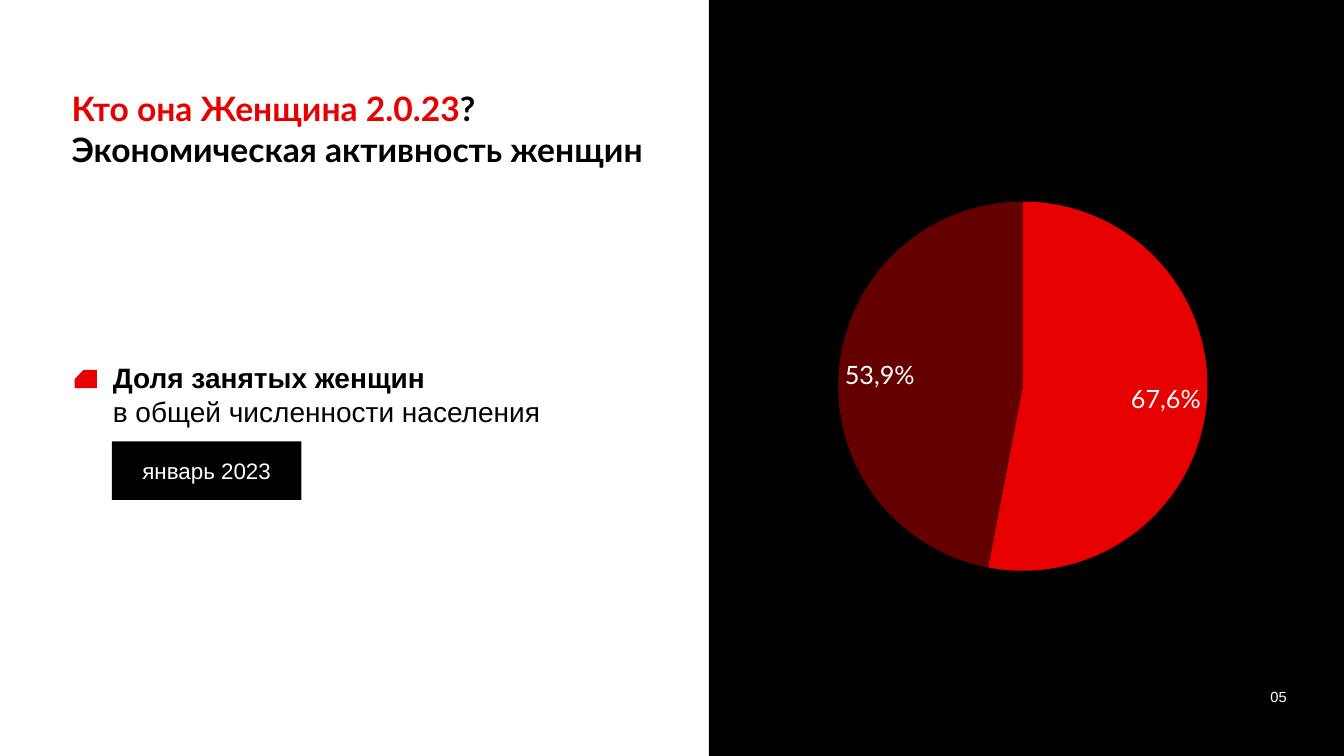
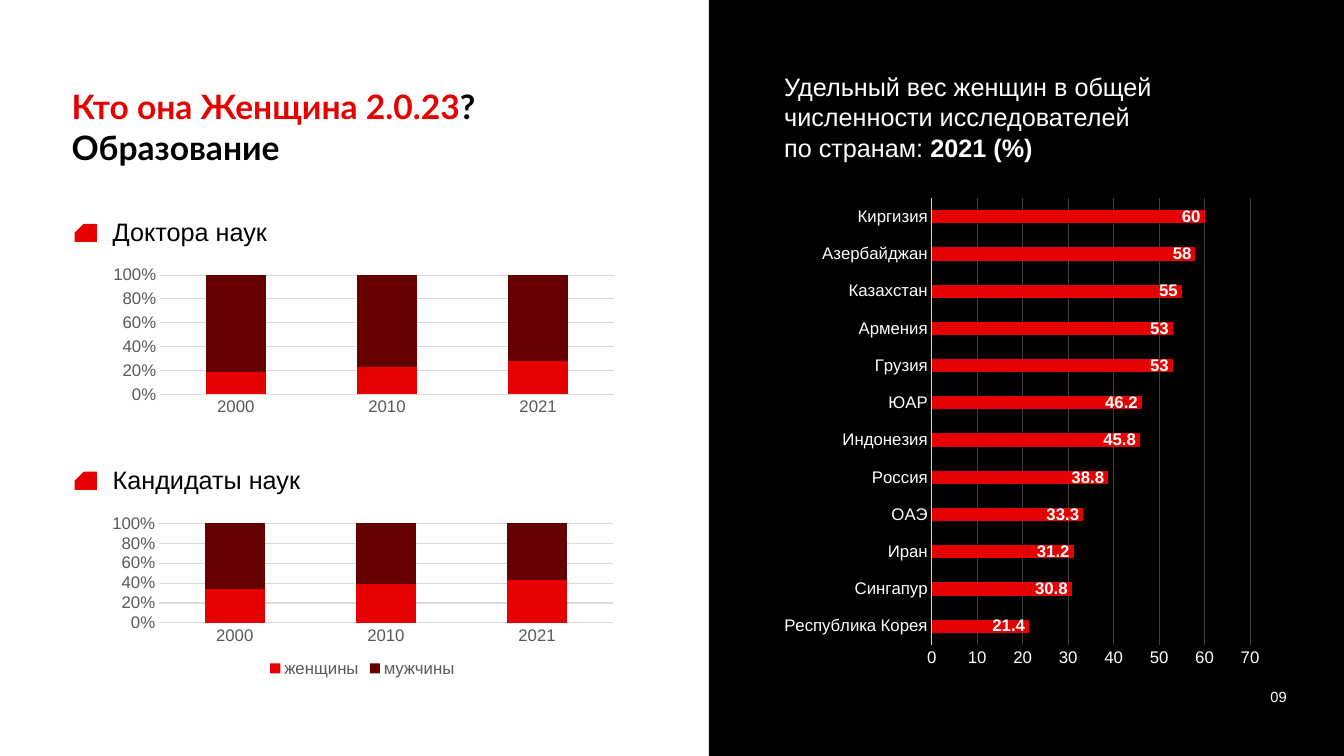
from pptx import Presentation
from pptx.chart.data import CategoryChartData
from pptx.dml.color import RGBColor
from pptx.enum import chart as charts, shapes, text
from pptx.oxml import parse_xml
from pptx.oxml.ns import nsdecls
from pptx.util import Inches, Pt

RED, DARK_RED = "E60000", "650000"
BLACK, WHITE = "000000", "FFFFFF"
GREY, LIGHT_GREY, GRID_GREY = "595959", "D9D9D9", "404040"
BODY_FONT, HEAD_FONT = "Arial", "Lato"
TEXT_LEFT = 1.02
YEARS = ["2000", "2010", "2021"]
COUNTRIES = [
    ("Республика Корея", 21.4), ("Сингапур", 30.8), ("Иран", 31.2),
    ("ОАЭ", 33.3), ("Россия", 38.8), ("Индонезия", 45.8),
    ("ЮАР", 46.2), ("Грузия", 53), ("Армения", 53),
    ("Казахстан", 55), ("Азербайджан", 58), ("Киргизия", 60),
]


# Formatting
def color(value):
    return RGBColor.from_string(value)


def style_font(font, size, tint, bold=False, name=BODY_FONT):
    font.size, font.bold, font.name = Pt(size), bold, name
    font.color.rgb = color(tint)


def paint(fill, tint):
    fill.solid()
    fill.fore_color.rgb = color(tint)


def draw_line(line, tint):
    line.width = Pt(0.75)
    line.color.rgb = color(tint)


def write(para, spans, size, name=BODY_FONT):
    """Add (text, colour, bold) spans; a newline becomes a line break."""
    for words, tint, bold in spans:
        for number, piece in enumerate(words.split("\n")):
            if number:
                para.add_line_break()
            if piece:
                span = para.add_run()
                span.text = piece
                style_font(span.font, size, tint, bold, name)


# Text and shapes
def add_text(page, place, spans, size, align=text.PP_ALIGN.LEFT,
             anchor=text.MSO_ANCHOR.TOP, before=0):
    box = page.shapes.add_textbox(*map(Inches, place))
    frame = box.text_frame
    frame.word_wrap = True
    frame.vertical_anchor = anchor
    para = frame.paragraphs[0]
    para.alignment = align
    para.space_before = Pt(before)
    write(para, spans, size)


def add_block(page, kind, place, tint):
    block = page.shapes.add_shape(kind, *map(Inches, place))
    block.shadow.inherit = False
    paint(block.fill, tint)
    block.line.fill.background()
    return block


def add_marker(page, top):
    marker = add_block(page, shapes.MSO_SHAPE.SNIP_1_RECTANGLE,
                       (0.74, top, 0.22, 0.18), RED)
    marker.adjustments[0] = 0.5
    marker._element.spPr.xfrm.set("flipH", "1")


def add_tag(page, place, words):
    tag = add_block(page, shapes.MSO_SHAPE.RECTANGLE, place, BLACK)
    tag.text_frame.vertical_anchor = text.MSO_ANCHOR.MIDDLE
    para = tag.text_frame.paragraphs[0]
    para.alignment = text.PP_ALIGN.CENTER
    write(para, [(words, WHITE, False)], 16)


def add_page(deck, number, title_top, subject):
    """Black right half, page number and two-colour title."""
    page = deck.slides.add_slide(deck.slide_layouts[5])
    add_block(page, shapes.MSO_SHAPE.RECTANGLE, (7.03, 0, 6.31, 7.5), BLACK)
    add_text(page, (11.99, 6.71, 0.87, 0.4), [(number, WHITE, False)], 10.5,
             text.PP_ALIGN.RIGHT, text.MSO_ANCHOR.MIDDLE)
    title = page.shapes.title
    title.left, title.top = Inches(0.61), Inches(title_top)
    title.width, title.height = Inches(6.05), Inches(1.23)
    frame = title.text_frame
    frame.auto_size = text.MSO_AUTO_SIZE.NONE
    frame.vertical_anchor = text.MSO_ANCHOR.MIDDLE
    para = frame.paragraphs[0]
    para.alignment = text.PP_ALIGN.LEFT
    write(para, [("Кто она Женщина 2.0.23", RED, True),
                 ("?\n" + subject, BLACK, True)], 24, HEAD_FONT)
    return page


# Charts
def add_chart(page, kind, place, categories, series):
    data = CategoryChartData()
    data.categories = categories
    for name, values in series:
        data.add_series(name, values)
    chart = page.shapes.add_chart(kind, *map(Inches, place), data).chart
    chart.has_title = chart.has_legend = False
    style_font(chart.font, 10, BLACK)
    return chart


def style_axes(chart, tint, grid):
    for axis in (chart.category_axis, chart.value_axis):
        axis.major_tick_mark = axis.minor_tick_mark = charts.XL_TICK_MARK.NONE
        style_font(axis.tick_labels.font, 12, tint)
    draw_line(chart.category_axis.format.line, LIGHT_GREY)
    chart.category_axis.has_major_gridlines = False
    chart.value_axis.format.line.fill.background()
    chart.value_axis.has_major_gridlines = True
    draw_line(chart.value_axis.major_gridlines.format.line, grid)


def style_bars(chart, gap, tints):
    plot = chart.plots[0]
    plot.gap_width = gap
    plot.vary_by_categories = False
    for series, tint in zip(plot.series, tints):
        paint(series.format.fill, tint)
        series.invert_if_negative = False


def set_plot_area(chart, x, y, w, h):
    """Fix the inner plot area, in fractions of the chart."""
    parts = "".join(f'<c:{tag} val="{value}"/>' for tag, value in (
        ("layoutTarget", "inner"), ("xMode", "edge"), ("yMode", "edge"),
        ("x", x), ("y", y), ("w", w), ("h", h)))
    area = chart._chartSpace.chart.plotArea
    for old in area.findall("{*}layout"):
        area.remove(old)
    area.insert(0, parse_xml(
        f'<c:layout {nsdecls("c")}><c:manualLayout>{parts}'
        '</c:manualLayout></c:layout>'))


def add_share_pie(page, place, slices):
    chart = add_chart(page, charts.XL_CHART_TYPE.PIE, place,
                      ["Кв. 1", "Кв. 2"],
                      [("Series 1", [value for value, _, _ in slices])])
    set_plot_area(chart, 0.16, 0.16, 0.68, 0.69)
    points = chart.plots[0].series[0].points
    for number, (_, label, tint) in enumerate(slices):
        point = points[number]
        paint(point.format.fill, tint)
        point.format.line.fill.background()
        para = point.data_label.text_frame.paragraphs[0]
        write(para, [(label, WHITE, False)], 18, HEAD_FONT)
        point.data_label.position = charts.XL_LABEL_POSITION.BEST_FIT


def add_gender_columns(page, place, series, legend=False):
    chart = add_chart(page, charts.XL_CHART_TYPE.COLUMN_STACKED_100, place,
                      YEARS, series)
    style_axes(chart, GREY, LIGHT_GREY)
    style_bars(chart, 150, (RED, DARK_RED))
    chart.plots[0].overlap = 100
    chart.value_axis.major_unit = 0.2
    labels = chart.value_axis.tick_labels
    labels.number_format, labels.number_format_is_linked = "0%", False
    if legend:
        chart.has_legend = True
        chart.legend.position = charts.XL_LEGEND_POSITION.BOTTOM
        chart.legend.include_in_layout = False
        style_font(chart.legend.font, 12, GREY)


def add_country_bars(page, place):
    names, values = zip(*COUNTRIES)
    chart = add_chart(page, charts.XL_CHART_TYPE.BAR_CLUSTERED, place,
                      names, [("Series 1", values)])
    style_axes(chart, WHITE, GRID_GREY)
    style_bars(chart, 182, (RED,))
    plot = chart.plots[0]
    plot.has_data_labels = True
    plot.data_labels.show_value = True
    plot.data_labels.position = charts.XL_LABEL_POSITION.INSIDE_END
    style_font(plot.data_labels.font, 12, WHITE, True)


# Slides
def build_activity(deck):
    page = add_page(deck, "05", 0.66, "Экономическая активность женщин")
    add_marker(page, 3.67)
    add_text(page, (TEXT_LEFT, 3.53, 4.71, 0.77),
             [("Доля занятых женщин \n", BLACK, True),
              ("в общей численности населения", BLACK, False)], 20)
    add_tag(page, (1.11, 4.38, 1.88, 0.58), "январь 2023")
    add_share_pie(page, (7.44, 1.15, 5.41, 5.31),
                  [(53, "67,6%", RED), (47, "53,9%", DARK_RED)])


def build_education(deck):
    page = add_page(deck, "09", 0.64, "Образование")
    for top, heading in ((2.1, "Доктора наук"), (4.56, "Кандидаты наук")):
        add_marker(page, top + 0.12)
        add_text(page, (TEXT_LEFT, top, 4.4, 0.4),
                 [(heading, BLACK, False)], 18)
    add_gender_columns(page, (1.02, 2.61, 5.17, 1.55),
                       [("Series 1", (19, 23, 28)),
                        ("Series 2", (81, 77, 72))])
    add_gender_columns(page, (1.01, 5.07, 5.17, 1.69),
                       [("женщины", (34, 39, 43)),
                        ("мужчины", (66, 61, 57))], legend=True)
    add_text(page, (7.68, 0.66, 4.93, 1.1),
             [("Удельный вес женщин в общей численности исследователей \n"
               "по странам: ", WHITE, False),
              ("2021 (%)", WHITE, True)], 18, before=10)
    add_country_bars(page, (7.68, 1.87, 4.91, 4.84))


def main():
    deck = Presentation()
    deck.slide_width, deck.slide_height = Inches(13.33), Inches(7.5)
    build_activity(deck)
    build_education(deck)
    deck.save("out.pptx")


if __name__ == "__main__":
    main()
